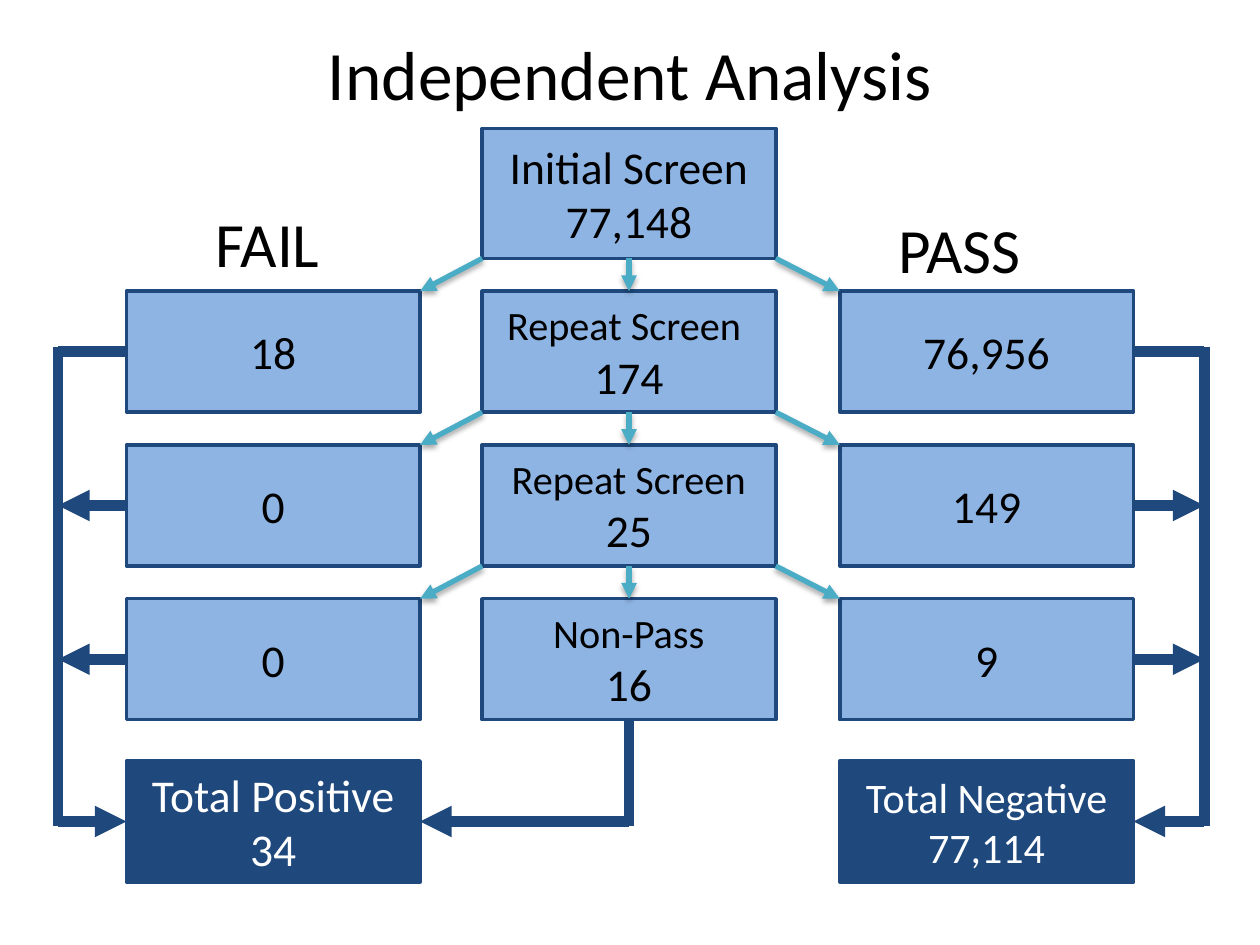
from typing import NamedTuple

from lxml.etree import SubElement
from pptx import Presentation
from pptx.dml.color import RGBColor
from pptx.enum.shapes import MSO_CONNECTOR, MSO_SHAPE
from pptx.enum.text import MSO_ANCHOR, PP_ALIGN
from pptx.oxml.ns import qn
from pptx.shapes.autoshape import Shape
from pptx.shapes.connector import Connector
from pptx.shapes.shapetree import SlideShapes
from pptx.text.text import TextFrame
from pptx.util import Cm, Pt

COLORS = {
    "navy": "1F497D",
    "sky": "8EB4E3",
    "teal": "4BACC6",
    "black": "000000",
    "white": "FFFFFF",
}
FONT = "Calibri"
TOP, LEFT, BOTTOM, RIGHT = range(4)

FAIL_X, SCREEN_X, PASS_X = 2.55, 9.72, 16.93
BOX_WIDTH, BOX_HEIGHT = 5.92, 2.44
INITIAL_Y, INITIAL_HEIGHT = 2.59, 2.62
FIRST_ROW_Y, ROW_PITCH = 5.87, 3.1
TOTAL_Y = 15.34
FAIL_RAIL_X, PASS_RAIL_X = 1.17, 24.28
RAIL_OVERHANG = 0.1


class TextLine(NamedTuple):
    text: str
    size: float = 26


class Stage(NamedTuple):
    fail: str
    screen: str
    screened: str
    passed: str


class Label(NamedTuple):
    text: str
    size: float
    x: float
    y: float
    width: float
    height: float
    align: PP_ALIGN = PP_ALIGN.LEFT


LABELS = [
    Label("Independent Analysis", 39.6, 1.27, 0.43, 22.86, 2.06, PP_ALIGN.CENTER),
    Label("PASS", 36, 17.86, 4.09, 5.13, 1.82),
    Label("FAIL", 36, 4.09, 3.99, 5.28, 1.8),
]
STAGES = [
    Stage("18", "Repeat Screen ", "174", "76,956"),
    Stage("0", "Repeat Screen", "25", "149"),
    Stage("0", "Non-Pass", "16", "9"),
]


def rgb(color: str) -> RGBColor:
    return RGBColor.from_string(COLORS[color])


def write(frame: TextFrame, lines: list[TextLine], color: str, align: PP_ALIGN) -> None:
    frame.word_wrap = True
    frame.vertical_anchor = MSO_ANCHOR.MIDDLE
    for index, line in enumerate(lines):
        paragraph = frame.add_paragraph() if index else frame.paragraphs[0]
        paragraph.alignment = align
        run = paragraph.add_run()
        run.text = line.text
        run.font.name = FONT
        run.font.size = Pt(line.size)
        run.font.color.rgb = rgb(color)


def add_label(shapes: SlideShapes, label: Label) -> None:
    box = shapes.add_textbox(Cm(label.x), Cm(label.y), Cm(label.width), Cm(label.height))
    write(box.text_frame, [TextLine(label.text, label.size)], "black", label.align)


def add_box(shapes: SlideShapes, x: float, y: float, lines: list[TextLine],
            height: float = BOX_HEIGHT, fill: str = "sky", ink: str = "black") -> Shape:
    box = shapes.add_shape(MSO_SHAPE.RECTANGLE, Cm(x), Cm(y), Cm(BOX_WIDTH), Cm(height))
    box.shadow.inherit = False
    box.fill.solid()
    box.fill.fore_color.rgb = rgb(fill)
    box.line.color.rgb = rgb("navy")
    box.line.width = Pt(2)
    write(box.text_frame, lines, ink, PP_ALIGN.CENTER)
    return box


def add_line(shapes: SlideShapes, start: tuple[int, int], end: tuple[int, int],
             color: str = "navy", width: float = 6, arrow: bool = True,
             shadow: bool = False) -> Connector:
    line = shapes.add_connector(MSO_CONNECTOR.STRAIGHT, *start, *end)
    line.line.color.rgb = rgb(color)
    line.line.width = Pt(width)
    if arrow:
        SubElement(line.line._get_or_add_ln(), qn("a:tailEnd"), type="triangle")
    effects = SubElement(line._element.spPr, qn("a:effectLst"))
    if shadow:
        outer = SubElement(effects, qn("a:outerShdw"), blurRad=str(Pt(3.1)),
                           dist=str(Pt(1.8)), dir="5400000", rotWithShape="0")
        shade = SubElement(outer, qn("a:srgbClr"), val=COLORS["black"])
        SubElement(shade, qn("a:alpha"), val="35000")
    return line


def side_middle(box: Shape, side: int) -> tuple[int, int]:
    x = {LEFT: box.left, RIGHT: box.left + box.width}.get(side, box.left + box.width // 2)
    y = {TOP: box.top, BOTTOM: box.top + box.height}.get(side, box.top + box.height // 2)
    return x, y


def add_flow(shapes: SlideShapes, source: Shape, fail: Shape, screen: Shape,
             passed: Shape) -> None:
    """Split one screening box into the three results below it."""
    style = {"color": "teal", "width": 3, "shadow": True}
    bottom, right = source.top + source.height, source.left + source.width
    add_line(shapes, (right, bottom), (passed.left, passed.top), **style)
    add_line(shapes, (source.left, bottom), (fail.left + fail.width, fail.top), **style)
    down = add_line(shapes, side_middle(source, BOTTOM), side_middle(screen, TOP), **style)
    down.begin_connect(source, BOTTOM)
    down.end_connect(screen, TOP)


def add_bracket(shapes: SlideShapes, results: list[Shape], total: Shape,
                rail_x: float, side: int) -> None:
    """Gather the results of one column on an outer rail that leads to their total."""
    rail = Cm(rail_x)
    for index, result in enumerate(results):
        start = side_middle(result, side)
        stub = add_line(shapes, start, (rail, start[1]), arrow=index > 0)
        stub.begin_connect(result, side)
    target = side_middle(total, side)
    top = side_middle(results[0], side)[1] - Cm(RAIL_OVERHANG)
    add_line(shapes, (rail, top), (rail, target[1] + Cm(RAIL_OVERHANG)), arrow=False)
    add_line(shapes, (rail, target[1]), target).end_connect(total, side)


def main() -> None:
    presentation = Presentation()
    presentation.slide_width, presentation.slide_height = Cm(25.4), Cm(19.05)
    shapes = presentation.slides.add_slide(presentation.slide_layouts[6]).shapes

    for label in LABELS:
        add_label(shapes, label)

    initial = add_box(shapes, SCREEN_X, INITIAL_Y,
                      [TextLine("Initial Screen"), TextLine("77,148")], INITIAL_HEIGHT)
    fails, screens, passes = [], [initial], []
    for row, stage in enumerate(STAGES):
        y = FIRST_ROW_Y + row * ROW_PITCH
        fails.append(add_box(shapes, FAIL_X, y, [TextLine(stage.fail)]))
        screens.append(add_box(shapes, SCREEN_X, y,
                               [TextLine(stage.screen, 23), TextLine(stage.screened)]))
        passes.append(add_box(shapes, PASS_X, y, [TextLine(stage.passed)]))
    positive = add_box(shapes, FAIL_X, TOTAL_Y, [TextLine("Total Positive"), TextLine("34")],
                       fill="navy", ink="white")
    negative = add_box(shapes, PASS_X, TOTAL_Y,
                       [TextLine("Total Negative", 24), TextLine("77,114", 24)],
                       fill="navy", ink="white")

    for source, fail, screen, passed in zip(screens, fails, screens[1:], passes):
        add_flow(shapes, source, fail, screen, passed)
    add_bracket(shapes, passes, negative, PASS_RAIL_X, RIGHT)
    add_bracket(shapes, fails, positive, FAIL_RAIL_X, LEFT)

    non_pass = screens[-1]
    drop = side_middle(non_pass, BOTTOM)
    target = side_middle(positive, RIGHT)
    corner = (drop[0], target[1])
    add_line(shapes, corner, target).end_connect(positive, RIGHT)
    down = add_line(shapes, drop, (corner[0], corner[1] + Cm(RAIL_OVERHANG)), arrow=False)
    down.begin_connect(non_pass, BOTTOM)

    presentation.save("out.pptx")


if __name__ == "__main__":
    main()
